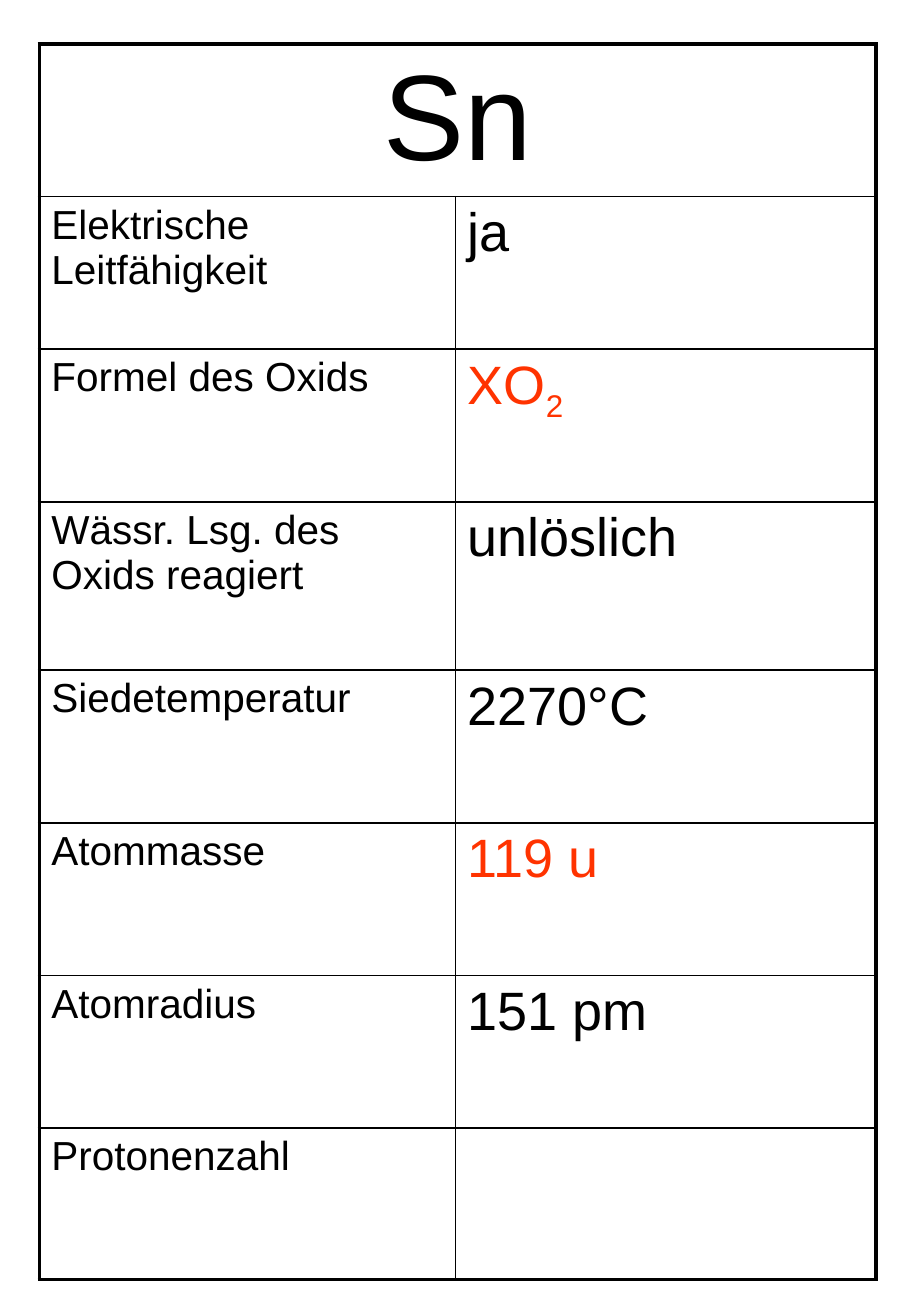
"""Build a one-page element card for tin as a table."""
from lxml.etree import SubElement
from pptx import Presentation
from pptx.dml.color import RGBColor
from pptx.enum.text import PP_ALIGN
from pptx.oxml.ns import qn
from pptx.util import Cm, Pt

BLACK, RED = "000000", "FF3300"
THIN, THICK = Pt(1), Pt(2.25)
HEAD = "Sn"
FACTS = [
    ("Elektrische Leitfähigkeit", "ja", "", BLACK),
    ("Formel des Oxids", "XO", "2", RED),
    ("Wässr. Lsg. des Oxids reagiert", "unlöslich", "", BLACK),
    ("Siedetemperatur", "2270°C", "", BLACK),
    ("Atommasse", "119 u", "", RED),
    ("Atomradius", "151 pm", "", BLACK),
    ("Protonenzahl", "", "", BLACK),
]
COLS = [8.71, 8.79]
ROWS = [3.19, 3.19, 3.19, 3.52, 3.19, 3.19, 3.19, 3.17]


def paint(hue):
    return RGBColor.from_string(hue)


def write(cell, text, size, hue=BLACK, sub=False):
    if not text:
        return
    run = cell.text_frame.paragraphs[0].add_run()
    run.text = text
    run.font.name = "Arial"
    run.font.size = Pt(size)
    run.font.color.rgb = paint(hue)
    if sub:
        run.font._element.set("baseline", "-25000")


def frame(cell, row, col):
    outer = {
        "L": col == 0,
        "R": col == 1 or row == 0,
        "T": row == 0,
        "B": row == len(ROWS) - 1,
    }
    props = cell._tc.get_or_add_tcPr()
    for side, thick in outer.items():
        line = SubElement(props, qn("a:ln" + side), w=str(THICK if thick else THIN))
        fill = SubElement(line, qn("a:solidFill"))
        SubElement(fill, qn("a:srgbClr"), val=BLACK)
    cell.fill.background()


def main():
    deck = Presentation()
    deck.slide_width, deck.slide_height = Cm(19.05), Cm(27.51)
    slide = deck.slides.add_slide(deck.slide_layouts[6])
    card = slide.shapes.add_table(
        len(ROWS), len(COLS), Cm(0.82), Cm(0.92), Cm(sum(COLS)), Cm(sum(ROWS))
    ).table
    card.first_row = card.horz_banding = False
    for col, width in zip(card.columns, COLS):
        col.width = Cm(width)
    for row, height in zip(card.rows, ROWS):
        row.height = Cm(height)
    for row in range(len(ROWS)):
        for col in range(len(COLS)):
            frame(card.cell(row, col), row, col)

    top = card.cell(0, 0)
    top.merge(card.cell(0, 1))
    write(top, HEAD, 72)
    top.text_frame.paragraphs[0].alignment = PP_ALIGN.CENTER
    for row, (label, value, sub, hue) in enumerate(FACTS, 1):
        write(card.cell(row, 0), label, 24)
        write(card.cell(row, 1), value, 32, hue)
        write(card.cell(row, 1), sub, 32, hue, sub=True)
    deck.save("out.pptx")


if __name__ == "__main__":
    main()
